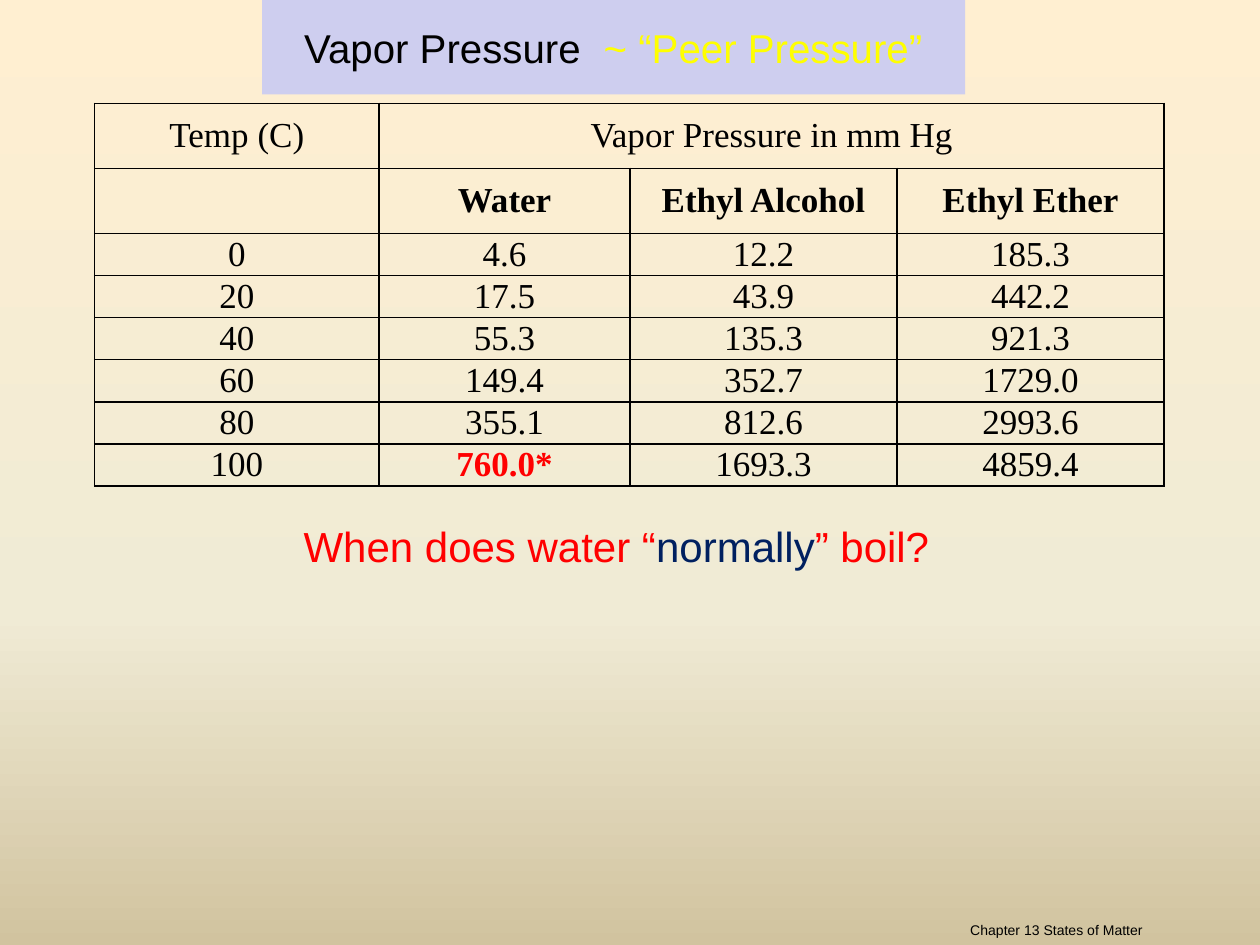
import copy

import pptx
import pptx.dml.color
import pptx.enum.shapes
import pptx.enum.text
import pptx.oxml
import pptx.oxml.ns
import pptx.util

Pt = pptx.util.Pt
ALIGN = pptx.enum.text.PP_ALIGN
ANCHOR = pptx.enum.text.MSO_ANCHOR

COLORS = {
    "black": "000000",
    "red": "FF0000",
    "navy": "002060",
    "yellow": "FFFF00",
    "lavender": "CECEEF",
    "sky": "FFEFD1",
    "cream": "F0EBD5",
    "sand": "D1C39F",
}
BACKGROUND_STOPS = [(0, "sky"), (0.65, "cream"), (1, "sand")]
COLUMN_WIDTHS = [162.72, 143.28, 152.64, 152.64]
HEADER_HEIGHT = 37.2
DATA_HEIGHT = 18.72
SUBSTANCES = ["", "Water", "Ethyl Alcohol", "Ethyl Ether"]
PRESSURES = [
    ["0", "4.6", "12.2", "185.3"],
    ["20", "17.5", "43.9", "442.2"],
    ["40", "55.3", "135.3", "921.3"],
    ["60", "149.4", "352.7", "1729.0"],
    ["80", "355.1", "812.6", "2993.6"],
    ["100", "760.0*", "1693.3", "4859.4"],
]


def rgb(name):
    return pptx.dml.color.RGBColor.from_string(COLORS[name])


def add_span(para, text, size=20, font="Arial", color="black", bold=False):
    span = para.add_run()
    span.text = text
    span.font.size = Pt(size)
    span.font.name = font
    span.font.bold = bold
    span.font.color.rgb = rgb(color)


def write_line(box, parts, size, align=ALIGN.CENTER, anchor=ANCHOR.TOP, right_inset=7.2):
    frame = box.text_frame
    frame.word_wrap = True
    frame.vertical_anchor = anchor
    frame.margin_right = Pt(right_inset)
    para = frame.paragraphs[0]
    para.alignment = align
    for text, color in parts:
        add_span(para, text, size=size, color=color)


def paint_background(page):
    fill = page.background.fill
    fill.gradient()
    fill.gradient_angle = 270
    stop_list = page.element.find(".//" + pptx.oxml.ns.qn("a:gsLst"))
    stop_list.append(copy.deepcopy(stop_list[0]))
    for stop, (position, color) in zip(fill.gradient_stops, BACKGROUND_STOPS):
        stop.position = position
        stop.color.rgb = rgb(color)


def add_title(page, left, top, width, height):
    box = page.shapes.add_shape(
        pptx.enum.shapes.MSO_SHAPE.RECTANGLE, Pt(left), Pt(top), Pt(width), Pt(height))
    box.shadow.inherit = False
    box.fill.solid()
    box.fill.fore_color.rgb = rgb("lavender")
    box.line.fill.background()
    parts = [("Vapor Pressure  ", "black"), ("~ “Peer Pressure”", "yellow")]
    write_line(box, parts, 23, anchor=ANCHOR.MIDDLE)


def format_cell(cell, text, color="black", bold=False):
    cell.margin_left = cell.margin_right = Pt(5)
    cell.margin_top = cell.margin_bottom = Pt(0)
    cell.vertical_anchor = ANCHOR.MIDDLE
    properties = cell._tc.get_or_add_tcPr()
    for side in ("L", "R", "T", "B"):
        properties.append(pptx.oxml.parse_xml(
            f'<a:ln{side} {pptx.oxml.ns.nsdecls("a")} w="{Pt(1)}"><a:solidFill>'
            f'<a:srgbClr val="{COLORS["black"]}"/></a:solidFill></a:ln{side}>'))
    cell.fill.background()
    para = cell.text_frame.paragraphs[0]
    para.alignment = ALIGN.CENTER
    if text:
        add_span(para, text, font="Times New Roman", color=color, bold=bold)


def add_pressure_table(page, left, top):
    rows = [["Temp (C)", "Vapor Pressure in mm Hg", "", ""], SUBSTANCES] + PRESSURES
    heights = [HEADER_HEIGHT] * 2 + [DATA_HEIGHT] * len(PRESSURES)
    table = page.shapes.add_table(
        len(rows), len(COLUMN_WIDTHS), Pt(left), Pt(top),
        Pt(sum(COLUMN_WIDTHS)), Pt(sum(heights))).table
    table.first_row = False
    table.horz_banding = False
    for column, width in zip(table.columns, COLUMN_WIDTHS):
        column.width = Pt(width)
    for row_index, values in enumerate(rows):
        table.rows[row_index].height = Pt(heights[row_index])
        for column_index, text in enumerate(values):
            boiling = text.endswith("*")
            format_cell(table.cell(row_index, column_index), text,
                        color="red" if boiling else "black",
                        bold=boiling or row_index == 1)
    table.cell(0, 1).merge(table.cell(0, 3))


def add_question(page, left, top, width, height):
    box = page.shapes.add_textbox(Pt(left), Pt(top), Pt(width), Pt(height))
    parts = [("When does water “", "red"), ("normally", "navy"), ("” boil?", "red")]
    write_line(box, parts, 24, right_inset=20.5)


def add_footer(page, left, top, width, height):
    box = page.shapes.add_textbox(Pt(left), Pt(top), Pt(width), Pt(height))
    write_line(box, [("Chapter 13 States of Matter", "black")], 8,
               align=ALIGN.RIGHT, anchor=ANCHOR.BOTTOM)


def main():
    deck = pptx.Presentation()
    deck.slide_width = Pt(720)
    deck.slide_height = Pt(540)
    page = deck.slides.add_slide(deck.slide_layouts[6])
    paint_background(page)
    add_question(page, 7.92, 293.76, 702, 71.28)
    add_footer(page, 324, 516.24, 336.24, 23.76)
    add_title(page, 149.76, 0, 401.76, 54)
    add_pressure_table(page, 54, 59.04)
    deck.save("out.pptx")


if __name__ == "__main__":
    main()
